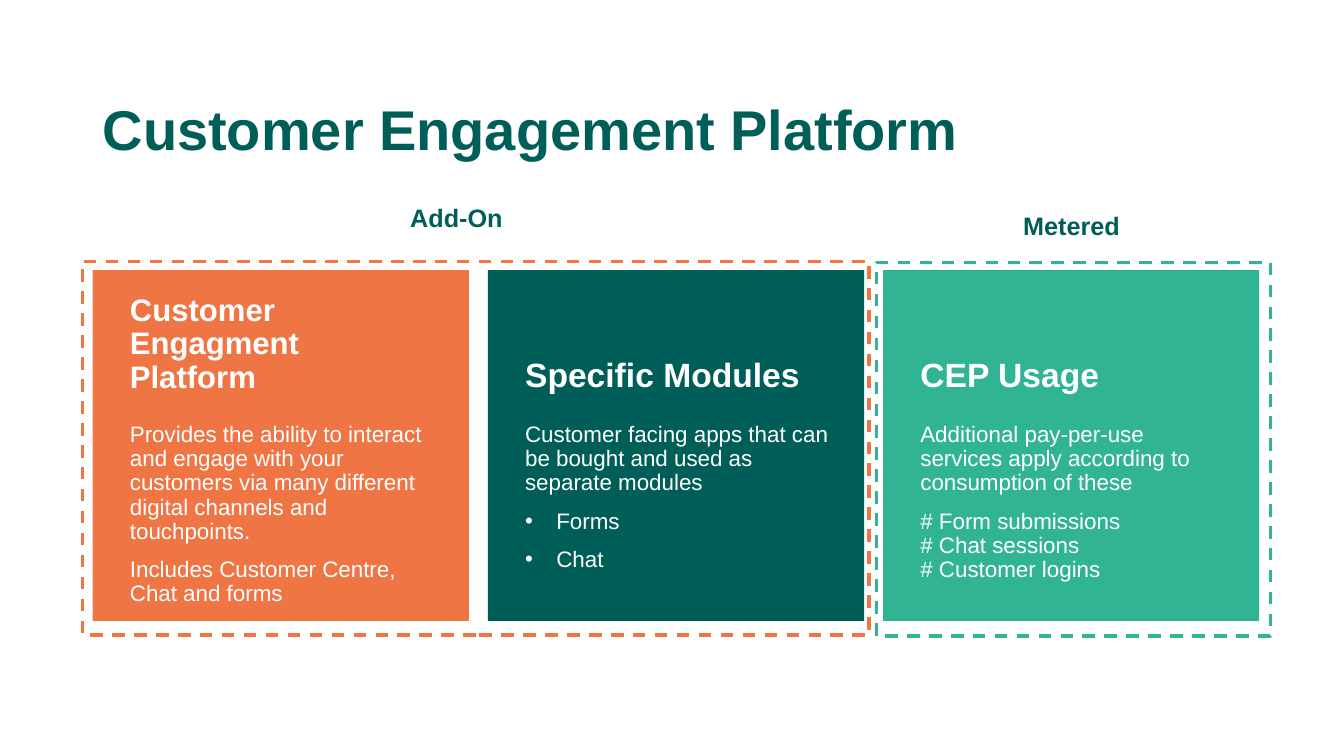
"""Build the Customer Engagement Platform slide with its three offer cards."""
from dataclasses import dataclass

from lxml.etree import SubElement
from pptx import Presentation
from pptx.dml.color import RGBColor
from pptx.enum.dml import MSO_LINE
from pptx.enum.shapes import MSO_SHAPE
from pptx.enum.text import MSO_ANCHOR, PP_ALIGN
from pptx.oxml.ns import qn
from pptx.slide import Slide
from pptx.text.text import TextFrame, _Paragraph
from pptx.util import Emu, Pt

PX = 9144
FONT = "Arial"
ORANGE = RGBColor(0xEF, 0x75, 0x45)
TEAL = RGBColor(0x00, 0x5E, 0x58)
GREEN = RGBColor(0x30, 0xB4, 0x94)
WHITE = RGBColor(0xFF, 0xFF, 0xFF)
CARD_LEFT, CARD_TOP, CARD_WIDTH, CARD_HEIGHT = 92, 268, 373, 348
CARD_STEP = 392
TEXT_INDENT = 27
BULLET_INDENT = 31


@dataclass(frozen=True)
class Style:
    """Size, colour and spacing of a text."""

    size: float
    color: RGBColor
    bold: bool = True
    line_spacing: float = 0.9
    anchor: MSO_ANCHOR = MSO_ANCHOR.TOP


@dataclass(frozen=True)
class Card:
    """One filled card with a heading, text and optional bullets."""

    color: RGBColor
    heading: str
    heading_size: float
    paragraphs: tuple[str, ...]
    bullets: tuple[str, ...] = ()
    text_width: int = 319


@dataclass(frozen=True)
class Group:
    """A dashed frame with the label above it."""

    color: RGBColor
    frame: tuple[int, int, int, int]
    label: str
    label_area: tuple[int, int, int, int]


CARDS = (
    Card(ORANGE, "Customer Engagment Platform", 22.2, (
        "Provides the ability to interact and engage with your customers "
        "via many different digital channels and touchpoints.",
        "Includes Customer Centre, Chat and forms",
    )),
    Card(TEAL, "Specific Modules", 24, (
        "Customer facing apps that can be bought and used as separate modules",
    ), ("Forms", "Chat"), 333),
    Card(GREEN, "CEP Usage", 24, (
        "Additional pay-per-use services apply according to consumption of these",
        "# Form submissions\n# Chat sessions\n# Customer logins",
    )),
)
GROUPS = (
    Group(ORANGE, (82, 259, 780, 371), "Add-On", (397, 196, 149, 40)),
    Group(GREEN, (869, 260, 391, 371), "Metered", (1005, 204, 149, 40)),
)
TITLE_STYLE = Style(40, TEAL, anchor=MSO_ANCHOR.MIDDLE)
LABEL_STYLE = Style(18, TEAL, line_spacing=1.0)
BODY_STYLE = Style(16, WHITE, bold=False)


def scale(area: tuple[int, int, int, int]) -> list[Emu]:
    """Turn an area in px into EMU."""
    return [Emu(length * PX) for length in area]


def add_bullet(para: _Paragraph) -> None:
    """Give a paragraph a hanging round bullet."""
    properties = para._p.get_or_add_pPr()
    properties.set("marL", str(BULLET_INDENT * PX))
    properties.set("indent", str(-BULLET_INDENT * PX))
    SubElement(properties, qn("a:buFont"), typeface=FONT)
    SubElement(properties, qn("a:buChar"), char="•")


def add_paragraph(frame: TextFrame, text: str, style: Style, first: bool, bullet: bool) -> None:
    """Write one paragraph, breaking its lines at each newline."""
    para = frame.paragraphs[0] if first else frame.add_paragraph()
    if bullet:
        add_bullet(para)
    para.alignment = PP_ALIGN.LEFT
    para.line_spacing = style.line_spacing
    para.space_before = Pt(0 if first else 10)
    para.font.size = Pt(style.size)
    for number, line in enumerate(text.split("\n")):
        if number:
            para.add_line_break()
        span = para.add_run()
        span.text = line
        span.font.name = FONT
        span.font.size = Pt(style.size)
        span.font.bold = style.bold
        span.font.color.rgb = style.color


def add_text(page: Slide, area: tuple[int, int, int, int], style: Style,
             paragraphs: tuple[str, ...], bullets: tuple[str, ...] = ()) -> None:
    """Add a text box of plain paragraphs followed by bullets."""
    frame = page.shapes.add_textbox(*scale(area)).text_frame
    frame.word_wrap = True
    frame.vertical_anchor = style.anchor
    for number, text in enumerate(paragraphs + bullets):
        add_paragraph(frame, text, style, number == 0, number >= len(paragraphs))


def add_card(page: Slide, card: Card, left: int) -> None:
    """Draw a card with its heading and text."""
    box = page.shapes.add_shape(
        MSO_SHAPE.RECTANGLE, *scale((left, CARD_TOP, CARD_WIDTH, CARD_HEIGHT)))
    box.shadow.inherit = False
    box.fill.solid()
    box.fill.fore_color.rgb = card.color
    box.line.fill.background()
    text_left = left + TEXT_INDENT
    heading_style = Style(card.heading_size, WHITE, anchor=MSO_ANCHOR.BOTTOM)
    add_text(page, (text_left, 415, card.text_width, 202), BODY_STYLE,
             card.paragraphs, card.bullets)
    add_text(page, (text_left, 303, 319, 94), heading_style, (card.heading,))


def add_group(page: Slide, group: Group) -> None:
    """Draw a dashed frame and its label."""
    box = page.shapes.add_shape(MSO_SHAPE.RECTANGLE, *scale(group.frame))
    box.shadow.inherit = False
    box.fill.background()
    box.line.color.rgb = group.color
    box.line.width = Pt(2.25)
    box.line.dash_style = MSO_LINE.DASH
    add_text(page, group.label_area, LABEL_STYLE, (group.label,))


def main() -> None:
    """Build and save the deck."""
    deck = Presentation()
    deck.slide_width, deck.slide_height = Emu(1333 * PX), Emu(750 * PX)
    page = deck.slides.add_slide(deck.slide_layouts[6])
    for number, card in enumerate(CARDS):
        add_card(page, card, CARD_LEFT + number * CARD_STEP)
    add_text(page, (92, 85, 1150, 93), TITLE_STYLE, ("Customer Engagement Platform",))
    for group in GROUPS:
        add_group(page, group)
    deck.save("out.pptx")


if __name__ == "__main__":
    main()
